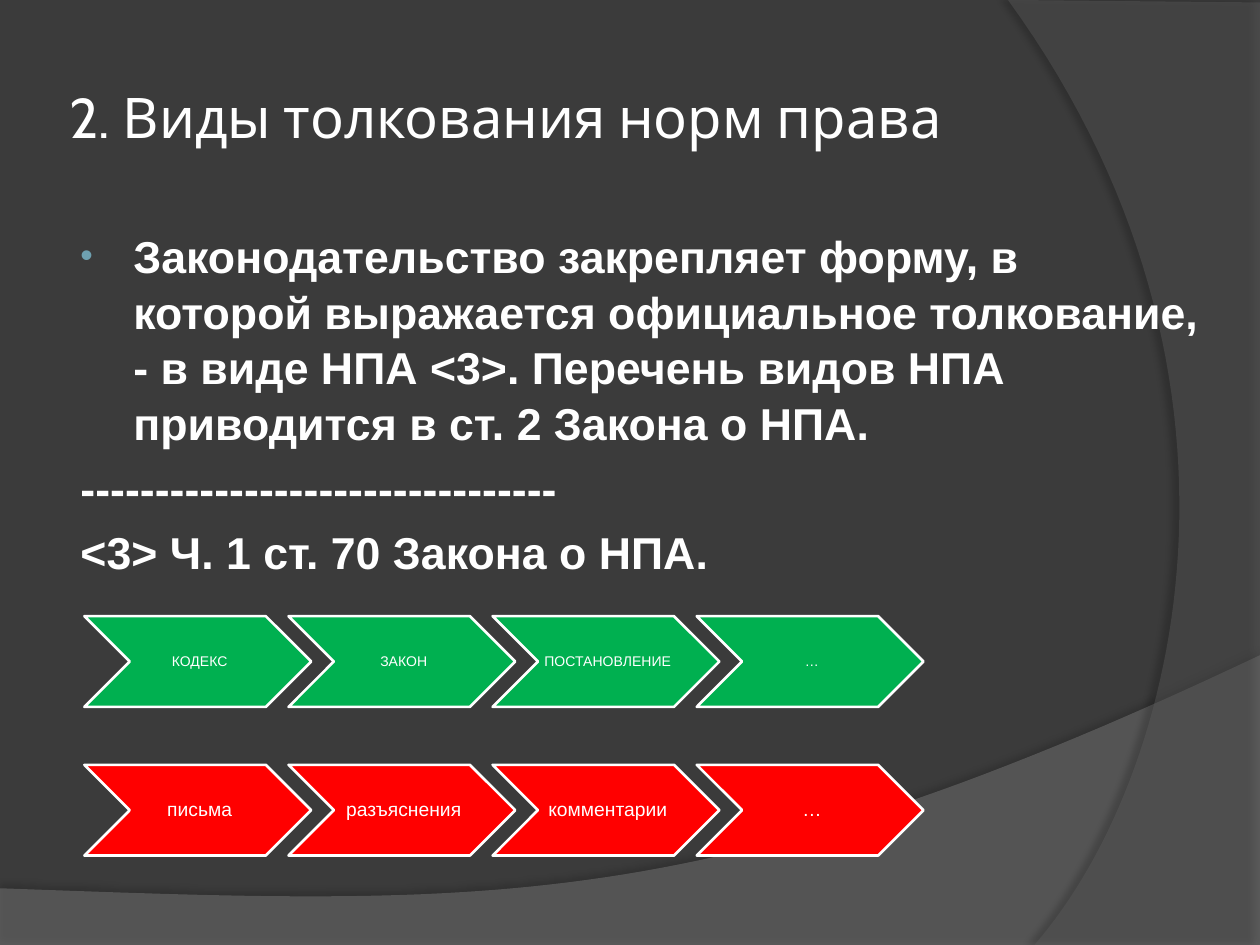
from lxml import etree
from pptx import Presentation
from pptx.dml.color import RGBColor
from pptx.enum.shapes import MSO_SHAPE
from pptx.enum.text import MSO_ANCHOR, PP_ALIGN
from pptx.oxml import parse_xml
from pptx.oxml.ns import qn
from pptx.util import Inches, Pt

HEX = {"back": "3B3B3B", "wave": "7F7F7F", "arc": "5E5E5E", "text": "FFFFFF",
       "dot": "6EA0B0", "green": "00B050", "red": "FF0000", "shade": "000000"}
NS = "http://schemas.openxmlformats.org/drawingml/2006/main"


def color(name):
    return RGBColor.from_string(HEX[name])


def write(para, text, size, face="Arial", bold=False):
    run = para.add_run()
    run.text = text
    look = {"size": Pt(size), "name": face, "bold": bold}
    for key, val in look.items():
        setattr(run.font, key, val)
    run.font.color.rgb = color("text")


prs = Presentation()
prs.slide_width, prs.slide_height = Inches(10), Inches(7.5)
slide = prs.slides.add_slide(prs.slide_layouts[6])
slide.background.fill.solid()
slide.background.fill.fore_color.rgb = color("back")

# Curved background bands: straight corners, then one Bezier edge
bands = [
    {"fill": "wave", "alpha": 45, "dark": 35, "dist": 3.5, "dir": 270,
     "line": [(0, 7.05), (0, 7.51), (10, 7.51)],
     "curve": [(10, 5.2), (5.59, 7.29), (3.91, 7.19), (0, 7.05)]},
    {"fill": "arc", "alpha": 40, "dark": 45, "dist": 4, "dir": 180,
     "line": [(10, 0.02), (10, 7.5)],
     "curve": [(8.21, 7.5), (9.35, 6.19), (10.18, 3), (8, 0)]},
]
steps = 60
for band in bands:
    pts = list(band["line"])
    for i in range(steps + 1):
        t = i / steps
        mix = [(1 - t) ** 3, 3 * t * (1 - t) ** 2, 3 * t ** 2 * (1 - t), t ** 3]
        pts.append(tuple(sum(m * p[k] for m, p in zip(mix, band["curve"]))
                         for k in (0, 1)))
    pts = [(Inches(x), Inches(y)) for x, y in pts]
    build = slide.shapes.build_freeform(*pts[0])
    build.add_line_segments(pts[1:], close=True)
    shape = build.convert_to_shape()
    shape.fill.solid()
    shape.fill.fore_color.rgb = color(band["fill"])
    shape.line.fill.background()
    tint = shape.fill._xPr.find(".//" + qn("a:srgbClr"))
    etree.SubElement(tint, qn("a:alpha"), val=str(band["alpha"] * 1000))
    shape._element.spPr.append(parse_xml(
        f'<a:effectLst xmlns:a="{NS}"><a:outerShdw blurRad="{Pt(4)}" '
        f'dist="{Pt(band["dist"])}" dir="{band["dir"] * 60000}" algn="ctr" '
        f'rotWithShape="0"><a:srgbClr val="{HEX["shade"]}">'
        f'<a:alpha val="{band["dark"] * 1000}"/></a:srgbClr>'
        f'</a:outerShdw></a:effectLst>'))

# Title
box = slide.shapes.add_textbox(Inches(0.5), Inches(0.3), Inches(8.17), Inches(1.25))
frame = box.text_frame
form = {"word_wrap": True, "vertical_anchor": MSO_ANCHOR.MIDDLE,
        "margin_left": Inches(0.05), "margin_right": Inches(0.05)}
for key, val in form.items():
    setattr(frame, key, val)
write(frame.paragraphs[0], "2. Виды толкования норм права", 32, "Cabin")

# Body: one bullet, a rule of dashes and a footnote
box = slide.shapes.add_textbox(Inches(0.5), Inches(1.75), Inches(9.15), Inches(2.55))
frame = box.text_frame
frame.word_wrap = True
lines = [
    "Законодательство закрепляет форму, в которой выражается официальное "
    "толкование, - в виде НПА <3>. Перечень видов НПА приводится в ст. 2 "
    "Закона о НПА.",
    "-" * 32,
    "<3> Ч. 1 ст. 70 Закона о НПА.",
]
for i, text in enumerate(lines):
    para = frame.add_paragraph() if i else frame.paragraphs[0]
    para.space_before = Pt(5)
    para.line_spacing = 1.04
    write(para, text, 25.5, bold=True)
    props = para._p.get_or_add_pPr()
    props.set("marL", str(Inches(0.04 if i else 0.46)))
    props.set("indent", str(Inches(0 if i else -0.42)))
    if i == 0:
        mark = etree.SubElement(props, qn("a:buClr"))
        etree.SubElement(mark, qn("a:srgbClr"), val=HEX["dot"])
        etree.SubElement(props, qn("a:buSzPct"), val="80000")
        etree.SubElement(props, qn("a:buFont"), typeface="Arial")
        etree.SubElement(props, qn("a:buChar"), char="•")

# Two rows of chevrons
rows = [
    (4.89, "green", 8, 0.01, ["КОДЕКС", "ЗАКОН", "ПОСТАНОВЛЕНИЕ", "…"]),
    (6.07, "red", 11, 0.02, ["письма", "разъяснения", "комментарии", "…"]),
]
for top, fill, size, pad, words in rows:
    for i, word in enumerate(words):
        shape = slide.shapes.add_shape(
            MSO_SHAPE.CHEVRON, Inches(0.67 + 1.62 * i), Inches(top),
            Inches(1.8), Inches(0.72))
        shape.shadow.inherit = False
        shape.fill.solid()
        shape.fill.fore_color.rgb = color(fill)
        shape.line.color.rgb = color("text")
        shape.line.width = Pt(1.5)
        frame = shape.text_frame
        form = {"word_wrap": True, "vertical_anchor": MSO_ANCHOR.MIDDLE,
                "margin_left": Inches(pad + 0.03), "margin_right": Inches(pad),
                "margin_top": Inches(pad), "margin_bottom": Inches(pad)}
        for key, val in form.items():
            setattr(frame, key, val)
        para = frame.paragraphs[0]
        para.alignment = PP_ALIGN.CENTER
        para.line_spacing = 0.9
        write(para, word, size)

prs.save("out.pptx")
